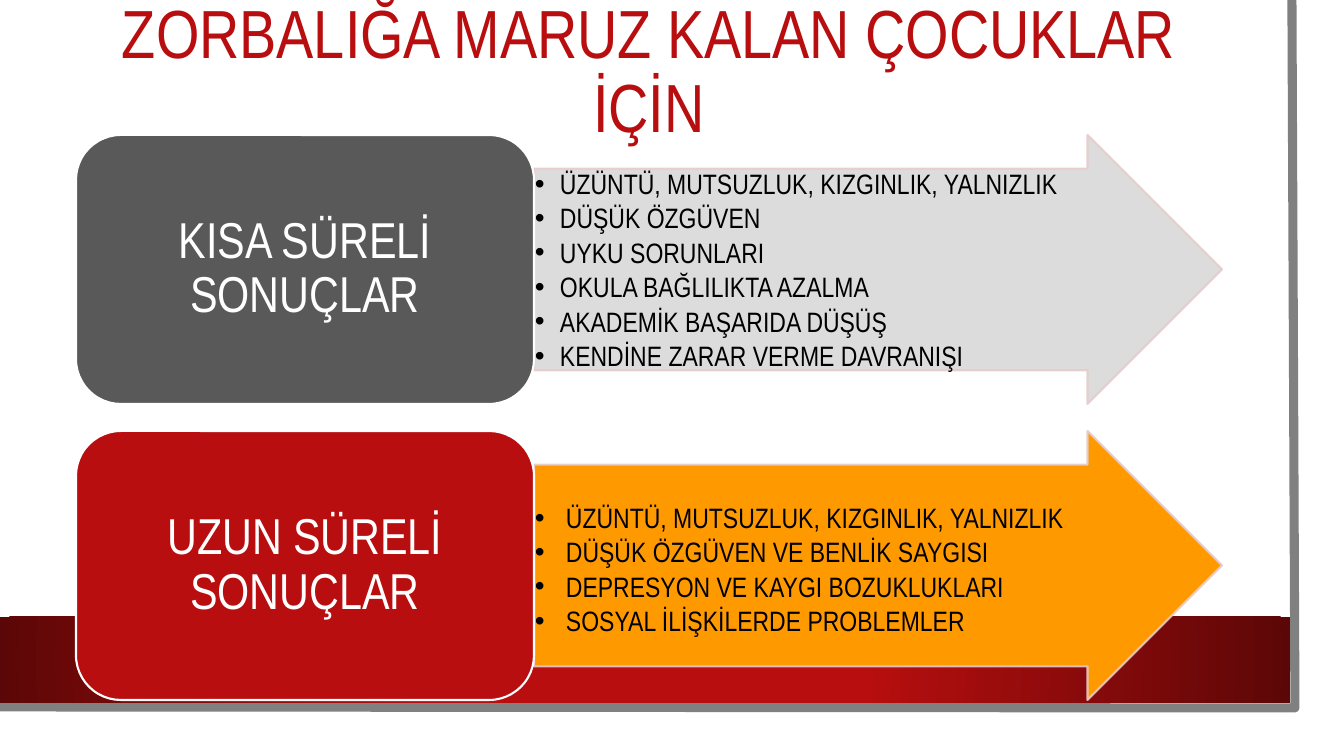
"""Build a slide on the short and long term effects of bullying on children."""
from lxml import etree
from pptx import Presentation
from pptx.dml.color import RGBColor
from pptx.enum.shapes import MSO_SHAPE
from pptx.enum.text import MSO_ANCHOR, MSO_AUTO_SIZE, PP_ALIGN
from pptx.oxml import parse_xml
from pptx.oxml.ns import nsdecls, qn
from pptx.util import Emu, Pt

SCALE = 914400 / 100.8
FONT = "Arial Narrow"
COLORS = {
    "white": "FFFFFF", "black": "000000", "red": "B80E0F", "dark_red": "5C0707",
    "edge": "808080", "gray": "595959", "light_gray": "D9D9D9",
    "orange": "FF9900", "arrow_line": "E6CCCC",
}
RECT, ROUNDED, ARROW = MSO_SHAPE.RECTANGLE, MSO_SHAPE.ROUNDED_RECTANGLE, MSO_SHAPE.RIGHT_ARROW
TOP, MIDDLE = MSO_ANCHOR.TOP, MSO_ANCHOR.MIDDLE
LEFT, CENTER = PP_ALIGN.LEFT, PP_ALIGN.CENTER
NO_AUTOFIT = MSO_AUTO_SIZE.NONE
TWO_CONTENT = 3

TITLE = "ZORBALIĞA MARUZ KALAN ÇOCUKLAR İÇİN"
ROWS = [
    {"label": "KISA SÜRELİ SONUÇLAR", "label_fill": "gray",
     "arrow_fill": "light_gray", "fill_alpha": 90, "inset_top": 1, "indent": 25,
     "effects": ["ÜZÜNTÜ, MUTSUZLUK, KIZGINLIK, YALNIZLIK", "DÜŞÜK ÖZGÜVEN",
                 "UYKU SORUNLARI", "OKULA BAĞLILIKTA AZALMA",
                 "AKADEMİK BAŞARIDA DÜŞÜŞ", "KENDİNE ZARAR VERME DAVRANIŞI"]},
    {"label": "UZUN SÜRELİ SONUÇLAR", "label_fill": "red",
     "arrow_fill": "orange", "fill_alpha": 100, "inset_top": 39, "indent": 31,
     "effects": ["ÜZÜNTÜ, MUTSUZLUK, KIZGINLIK, YALNIZLIK",
                 "DÜŞÜK ÖZGÜVEN VE BENLİK SAYGISI",
                 "DEPRESYON VE KAYGI BOZUKLUKLARI",
                 "SOSYAL İLİŞKİLERDE PROBLEMLER"]},
]
FIRST_TOP, ROW_STEP, ROW_HEIGHT = 135, 296, 269
LABEL_LEFT, LABEL_WIDTH = 76, 458
ARROW_LEFT, ARROW_WIDTH = LABEL_LEFT + LABEL_WIDTH, 688


def px(length):
    """Turn pixels into EMU."""
    return Emu(round(length * SCALE))


def rgb(color):
    """Look up a named colour."""
    return RGBColor.from_string(COLORS[color])


def set_alpha(color_parent, percent):
    """Make the colour under an element partly transparent."""
    color = next(color_parent.iter(qn("a:srgbClr")))
    etree.SubElement(color, qn("a:alpha")).set("val", str(percent * 1000))


def add_block(slide, kind, box, fill, line=None):
    """Add a preset shape with a plain fill and an optional thin outline."""
    block = slide.shapes.add_shape(kind, *map(px, box))
    block.shadow.inherit = False
    block.fill.solid()
    block.fill.fore_color.rgb = rgb(fill)
    if line:
        block.line.color.rgb = rgb(line)
        block.line.width = Pt(1.5)
    else:
        block.line.fill.background()
    return block


def place(holder, box):
    """Move a placeholder and bring it to the front."""
    holder.left, holder.top, holder.width, holder.height = map(px, box)
    holder.element.getparent().append(holder.element)


def format_frame(frame, anchor, insets):
    """Set wrapping, anchor and insets of a text frame."""
    frame.auto_size = NO_AUTOFIT
    frame.word_wrap = True
    frame.vertical_anchor = anchor
    (frame.margin_left, frame.margin_top,
     frame.margin_right, frame.margin_bottom) = map(px, insets)


def write(paragraph, text, size, color, align, after=0):
    """Fill a paragraph with one formatted run."""
    paragraph.alignment = align
    paragraph.line_spacing = 0.9
    paragraph.space_before = Pt(0)
    paragraph.space_after = Pt(after)
    run = paragraph.add_run()
    run.text = text
    run.font.name = FONT
    run.font.size = Pt(size)
    run.font.color.rgb = rgb(color)


def add_bullet(paragraph, indent):
    """Give a paragraph a round bullet and a hanging indent."""
    properties = paragraph._p.get_or_add_pPr()
    properties.set("marL", str(px(indent)))
    properties.set("indent", str(-px(indent)))
    etree.SubElement(properties, qn("a:buFont")).set("typeface", "Arial")
    etree.SubElement(properties, qn("a:buChar")).set("char", "•")


def add_backdrop(slide):
    """Add the white panel, its gray edge and the red band."""
    add_block(slide, RECT, (0, 0, 1320, 733), "white")
    outline = slide.shapes.build_freeform(px(1292), 0)
    outline.add_line_segments([(px(1295), px(708)), (px(-3), px(707))], close=False)
    edge = outline.convert_to_shape()
    edge.shadow.inherit = False
    edge.fill.background()
    edge.line.color.rgb = rgb("edge")
    edge.line.width = Pt(6.5)
    band = add_block(slide, RECT, (0, 617, 1290, 86), "red")
    gradient = parse_xml(
        f'<a:gradFill {nsdecls("a")} rotWithShape="1"><a:gsLst>'
        f'<a:gs pos="34000"><a:srgbClr val="{COLORS["red"]}"/></a:gs>'
        f'<a:gs pos="100000"><a:srgbClr val="{COLORS["dark_red"]}"/></a:gs></a:gsLst>'
        '<a:path path="circle"><a:fillToRect l="50000" t="50000" r="50000" b="50000"/>'
        '</a:path></a:gradFill>')
    solid = band.element.spPr.find(qn("a:solidFill"))
    solid.getparent().replace(solid, gradient)


def add_title(slide):
    """Write the centred slide title."""
    title = slide.shapes.title
    place(title, (76, 35, 1146, 77))
    format_frame(title.text_frame, MIDDLE, (10, 5, 10, 5))
    write(title.text_frame.paragraphs[0], TITLE, 48.6, "red", CENTER)


def add_row(slide, row, top, effects_holder):
    """Add an arrow with its list of effects and the label at its left."""
    arrow = add_block(slide, ARROW, (ARROW_LEFT, top, ARROW_WIDTH, ROW_HEIGHT),
                      row["arrow_fill"], "arrow_line")
    arrow.adjustments[0], arrow.adjustments[1] = 0.75, 0.5
    set_alpha(arrow.element.spPr.find(qn("a:ln")), 90)
    if row["fill_alpha"] < 100:
        set_alpha(arrow.element.spPr.find(qn("a:solidFill")), row["fill_alpha"])

    place(effects_holder, (ARROW_LEFT, top + 34, 587, 202))
    frame = effects_holder.text_frame
    format_frame(frame, TOP, (1, row["inset_top"], 1, 1))
    for number, effect in enumerate(row["effects"]):
        paragraph = frame.add_paragraph() if number else frame.paragraphs[0]
        add_bullet(paragraph, row["indent"])
        write(paragraph, effect, 20, "black", LEFT, after=3)

    label = add_block(slide, ROUNDED, (LABEL_LEFT, top, LABEL_WIDTH, ROW_HEIGHT),
                      row["label_fill"], "white")
    format_frame(label.text_frame, MIDDLE, (15, 7, 15, 7))
    write(label.text_frame.paragraphs[0], row["label"], 36, "white", CENTER)


def main():
    """Build and save the slide."""
    deck = Presentation()
    deck.slide_width, deck.slide_height = px(1344), px(756)
    slide = deck.slides.add_slide(deck.slide_layouts[TWO_CONTENT])
    add_backdrop(slide)
    add_title(slide)
    effects_holders = [slide.placeholders[1], slide.placeholders[2]]
    for number, (row, holder) in enumerate(zip(ROWS, effects_holders)):
        add_row(slide, row, FIRST_TOP + number * ROW_STEP, holder)
    deck.save("out.pptx")


if __name__ == "__main__":
    main()
